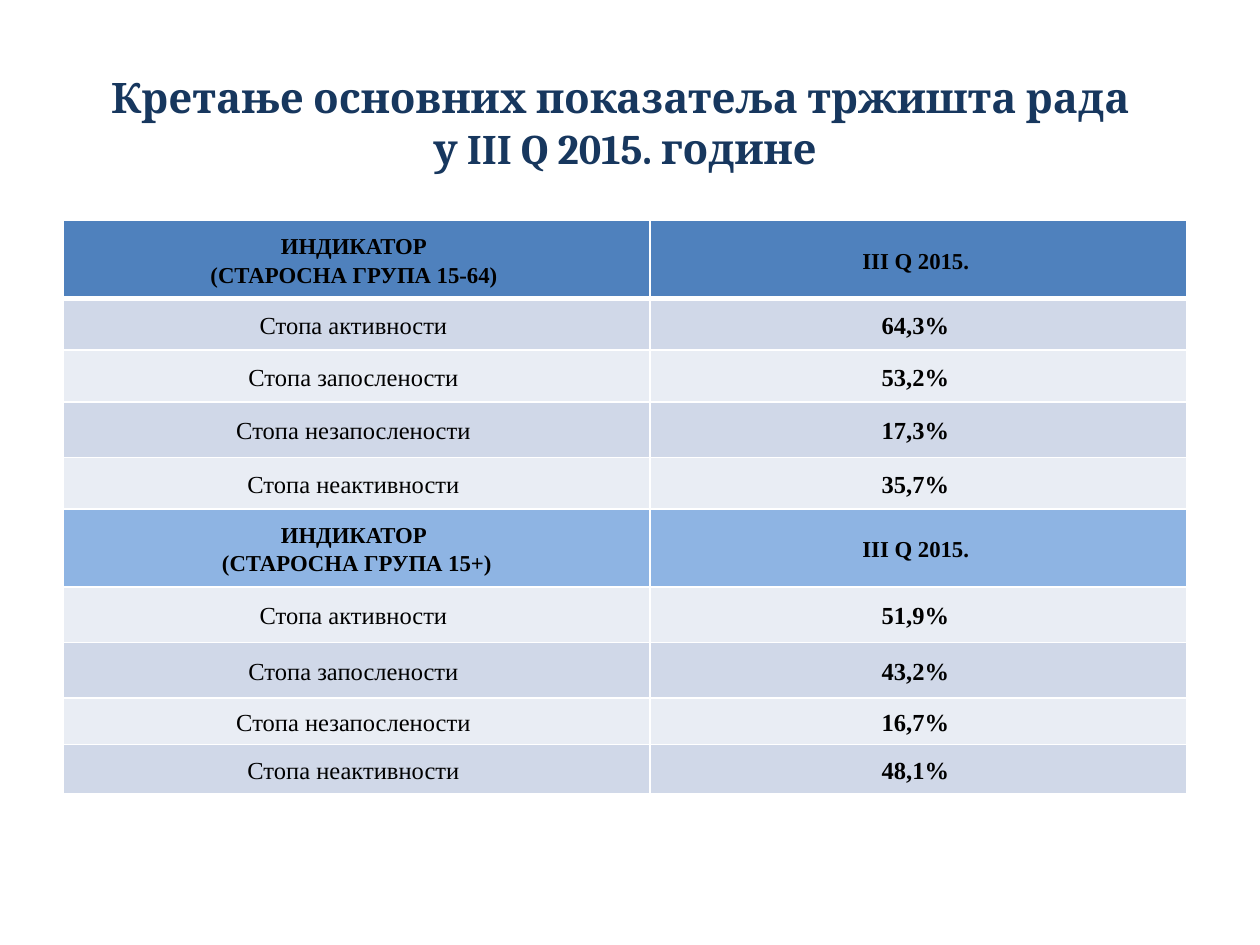
from pptx import Presentation
from pptx.util import Inches, Pt
from pptx.dml.color import RGBColor as Rgb
from pptx.enum.text import PP_ALIGN as Align, MSO_ANCHOR as Anchor
from lxml.etree import SubElement
from pptx.oxml.ns import qn

COLORS = {"title": "17375E", "text": "000000", "line": "FFFFFF",
          "header": "4F81BD", "subheader": "8EB4E3",
          "dark": "D0D8E8", "light": "E9EDF4"}


def add_run(para, text, font, size, color, bold):
    span = para.add_run()
    span.text = text
    span.font.name = font
    span.font.size = Pt(size)
    span.font.bold = bold
    span.font.color.rgb = Rgb.from_string(COLORS[color])


def add_border(cell, side, width):
    line = SubElement(cell._tc.get_or_add_tcPr(), qn(f"a:ln{side}"), w=str(Pt(width)))
    fill = SubElement(line, qn("a:solidFill"))
    SubElement(fill, qn("a:srgbClr"), val=COLORS["line"])


deck = Presentation()
deck.slide_width, deck.slide_height = Inches(10), Inches(7.5)
page = deck.slides.add_slide(deck.slide_layouts[6])
unit = deck.slide_width // 100

box = page.shapes.add_textbox(*[int(unit * share) for share in (7.5, 5, 84.2, 9.2)])
frame = box.text_frame
frame.word_wrap = True
frame.vertical_anchor = Anchor.BOTTOM
para = frame.paragraphs[0]
para.alignment = Align.CENTER
add_run(para, "Кретање основних показатеља тржишта рада ", "Cambria", 24, "title", True)
para.add_line_break()
add_run(para, "у III Q 2015. године", "Cambria", 24, "title", True)

quarter = "III Q 2015. "
rates = ["Стопа активности ", "Стопа запослености ",
         "Стопа незапослености ", "Стопа неактивности "]
groups = [
    ("(СТАРОСНА ГРУПА 15-64) ", "header", ["64,3% ", "53,2% ", "17,3% ", "35,7% "]),
    ("(СТАРОСНА ГРУПА 15+)", "subheader", ["51,9% ", "43,2% ", "16,7% ", "48,1% "]),
]
rows = []
for age, shade, values in groups:
    rows.append((["ИНДИКАТОР ", age], quarter, shade))
    for rate, value in zip(rates, values):
        rows.append(([rate], value, "dark" if len(rows) % 2 else "light"))

columns = [46.6, 42.6]
heights = [6.2, 4.1, 4.1, 4.4, 4.1, 6.2, 4.4, 4.4, 3.7, 3.9]
table = page.shapes.add_table(len(rows), len(columns), unit * 5, int(unit * 17.5),
                              int(unit * sum(columns)), int(unit * sum(heights))).table
for column, width in zip(table.columns, columns):
    column.width = int(unit * width)

for index, (labels, value, shade) in enumerate(rows):
    table.rows[index].height = int(unit * heights[index])
    heading = "header" in shade
    for position, lines in enumerate((labels, [value])):
        cell = table.cell(index, position)
        cell.vertical_anchor = Anchor.MIDDLE
        cell.margin_left = cell.margin_right = Inches(0.09)
        cell.margin_top = cell.margin_bottom = Inches(0.05)
        for side in "LRTB":
            thick = (index, side) in ((0, "B"), (1, "T"))
            add_border(cell, side, 3 if thick else 1)
        cell.fill.solid()
        cell.fill.fore_color.rgb = Rgb.from_string(COLORS[shade])
        for number, line in enumerate(lines):
            para = cell.text_frame.add_paragraph() if number else cell.text_frame.paragraphs[0]
            para.alignment = Align.CENTER
            para.line_spacing = 1.15
            add_run(para, line, "Times New Roman", 13 if heading else 14, "text",
                    heading or position == 1)

deck.save("out.pptx")
